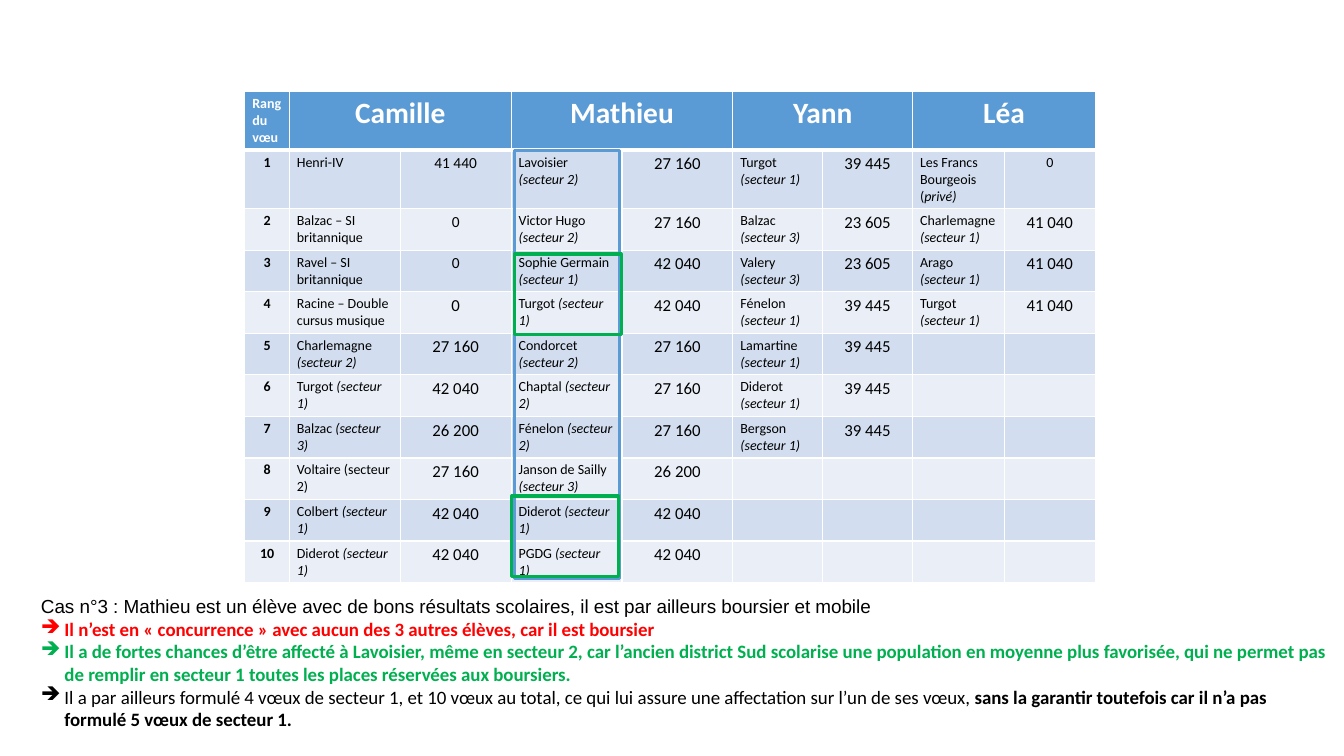
"""Builds the slide comparing the ranked school wishes of four pupils."""
import dataclasses

import lxml.etree
import pptx
import pptx.dml.color
import pptx.enum.shapes
import pptx.enum.text
import pptx.oxml.ns
import pptx.util

EMU_PER_PX = 3810
ALIGN = pptx.enum.text.PP_ALIGN


@dataclasses.dataclass(frozen=True)
class Theme:
    blue: str = "5B9BD5"
    green: str = "00B050"
    red: str = "FF0000"
    black: str = "000000"
    white: str = "FFFFFF"
    bands: tuple = ("D2DEEF", "EAEFF7")
    table_font: str = "Calibri"
    intro_font: str = "Arial"
    small: float = 10
    medium: float = 11
    value: float = 12
    comment: float = 13.5
    pupil: float = 21
    border: float = 1
    header_border: float = 3
    frame: float = 2.25


THEME = Theme()

COLUMN_WIDTHS = (106, 264, 264, 264, 264, 214, 214, 218, 218)
ROW_HEIGHTS = (136, 138) + (98,) * 9

WISHES = {
    "Camille": (
        ("Henri-IV", "41 440", THEME.medium),
        ("Balzac – SI britannique", "0", THEME.medium),
        ("Ravel – SI britannique", "0", THEME.medium),
        ("Racine – Double cursus musique", "0"),
        ("Charlemagne |(secteur 2)", "27 160"),
        ("Turgot |(secteur 1)", "42 040"),
        ("Balzac| (secteur 3)", "26 200"),
        ("Voltaire (secteur 2)", "27 160"),
        ("Colbert |(secteur 1)", "42 040"),
        ("Diderot |(secteur 1)", "42 040"),
    ),
    "Mathieu": (
        ("Lavoisier |(secteur 2)", "27 160"),
        ("Victor Hugo| (secteur 2)", "27 160"),
        ("Sophie Germain |(secteur 1)", "42 040"),
        ("Turgot |(secteur 1)", "42 040"),
        ("Condorcet |(secteur 2)", "27 160"),
        ("Chaptal |(secteur 2)", "27 160"),
        ("Fénelon |(secteur 2)", "27 160"),
        ("Janson de Sailly |(secteur 3)", "26 200"),
        ("Diderot |(secteur 1)", "42 040"),
        ("PGDG |(secteur 1)", "42 040"),
    ),
    "Yann": (
        ("Turgot |(secteur 1)", "39 445"),
        ("Balzac |(secteur 3)", "23 605"),
        ("Valery |(secteur 3)", "23 605"),
        ("Fénelon |(secteur 1)", "39 445"),
        ("Lamartine |(secteur 1)", "39 445"),
        ("Diderot |(secteur 1)", "39 445"),
        ("Bergson |(secteur 1)", "39 445"),
    ),
    "Léa": (
        ("Les Francs Bourgeois (|privé)", "0", THEME.small),
        ("Charlemagne |(secteur 1)", "41 040"),
        ("Arago |(secteur 1)", "41 040"),
        ("Turgot |(secteur 1)", "41 040"),
    ),
}

INTRO = ("Cas n°3 : Mathieu est un élève avec de bons résultats scolaires, "
         "il est par ailleurs boursier et mobile")
FINDINGS = (
    (THEME.red, (("Il n’est en « concurrence » avec aucun des 3 autres élèves, "
                  "car il est boursier", True),)),
    (THEME.green, (("Il a de fortes chances d’être affecté à Lavoisier, même en secteur 2, "
                    "car l’ancien district Sud scolarise une population en moyenne plus "
                    "favorisée, qui ne permet pas de remplir en secteur 1 toutes les places "
                    "réservées aux boursiers.", True),)),
    (THEME.black, (("Il a par ailleurs formulé 4 vœux de secteur 1, et 10 vœux au total, "
                    "ce qui lui assure une affectation sur l’un de ses vœux, ", False),
                   ("sans la garantir toutefois car il n’a pas formulé 5 vœux de secteur 1.",
                    True))),
)


def px(length):
    return pptx.util.Emu(length * EMU_PER_PX)


def rgb(colour):
    return pptx.dml.color.RGBColor.from_string(colour)


def add_run(paragraph, text, size, colour=THEME.black, bold=False, italic=False,
            font=THEME.table_font):
    run = paragraph.add_run()
    run.text = text
    run.font.name = font
    run.font.size = pptx.util.Pt(size)
    run.font.bold = bold
    run.font.italic = italic
    run.font.color.rgb = rgb(colour)


def add_xml(parent, tag, **attributes):
    return lxml.etree.SubElement(parent, pptx.oxml.ns.qn(tag), attributes)


def style_cell(cell, fill, top, bottom):
    cell.margin_left = cell.margin_right = px(18)
    cell.margin_top = cell.margin_bottom = px(9)
    properties = cell._tc.get_or_add_tcPr()
    widths = {"a:lnL": THEME.border, "a:lnR": THEME.border, "a:lnT": top, "a:lnB": bottom}
    for side, width in widths.items():
        border = add_xml(properties, side, w=str(pptx.util.Pt(width)))
        add_xml(add_xml(border, "a:solidFill"), "a:srgbClr", val=THEME.white)
    cell.fill.solid()
    cell.fill.fore_color.rgb = rgb(fill)


def write_centred(cell, text, size, **style):
    paragraph = cell.text_frame.paragraphs[0]
    paragraph.alignment = ALIGN.CENTER
    add_run(paragraph, text, size, **style)


def write_school(cell, school):
    name, _, sector = school.partition("|")
    paragraph = cell.text_frame.paragraphs[0]
    add_run(paragraph, name, THEME.small)
    if sector:
        add_run(paragraph, sector, THEME.small, italic=True)


def style_grid(table):
    for column, width in zip(table.columns, COLUMN_WIDTHS):
        column.width = px(width)
    for index, (row, height) in enumerate(zip(table.rows, ROW_HEIGHTS)):
        row.height = px(height)
        fill = THEME.bands[(index - 1) % 2] if index else THEME.blue
        top = THEME.header_border if index == 1 else THEME.border
        bottom = THEME.border if index else THEME.header_border
        for cell in row.cells:
            style_cell(cell, fill, top, bottom)


def add_wish_table(slide):
    table = slide.shapes.add_table(
        len(ROW_HEIGHTS), len(COLUMN_WIDTHS), px(583), px(218),
        px(sum(COLUMN_WIDTHS)), px(sum(ROW_HEIGHTS))).table
    style_grid(table)
    rank_title = table.cell(0, 0).text_frame.paragraphs[0]
    add_run(rank_title, "Rang", THEME.small, THEME.white, bold=True)
    rank_title.add_line_break()
    add_run(rank_title, "du vœu", THEME.small, THEME.white, bold=True)
    for rank in range(1, len(ROW_HEIGHTS)):
        write_centred(table.cell(rank, 0), str(rank), THEME.small, bold=True)
    for index, (pupil, wishes) in enumerate(WISHES.items()):
        column = 1 + 2 * index
        heading = table.cell(0, column)
        heading.merge(table.cell(0, column + 1))
        write_centred(heading, pupil, THEME.pupil, colour=THEME.white, bold=True)
        for rank, (school, points, *size) in enumerate(wishes, 1):
            write_school(table.cell(rank, column), school)
            write_centred(table.cell(rank, column + 1), points, *(size or [THEME.value]))


def add_frame(slide, left, top, width, height, colour):
    frame = slide.shapes.add_shape(pptx.enum.shapes.MSO_SHAPE.RECTANGLE,
                                   px(left), px(top), px(width), px(height))
    frame.shadow.inherit = False
    frame.fill.background()
    frame.line.color.rgb = rgb(colour)
    frame.line.width = pptx.util.Pt(THEME.frame)


def add_finding(text_frame, colour, parts):
    paragraph = text_frame.add_paragraph()
    properties = paragraph._p.get_or_add_pPr()
    properties.set("marL", str(px(56)))
    properties.set("indent", str(px(-56)))
    add_xml(properties, "a:buChar", char="➔")
    for text, bold in parts:
        add_run(paragraph, text, THEME.comment, colour, bold)


def add_commentary(slide):
    commentary = slide.shapes.add_textbox(px(74), px(1404), px(3110), px(350)).text_frame
    commentary.word_wrap = True
    intro = commentary.paragraphs[0]
    intro.alignment = ALIGN.JUSTIFY
    add_run(intro, INTRO, THEME.comment, font=THEME.intro_font)
    for colour, parts in FINDINGS:
        add_finding(commentary, colour, parts)


def main():
    presentation = pptx.Presentation()
    presentation.slide_width = px(3200)
    presentation.slide_height = px(1800)
    slide = presentation.slides.add_slide(presentation.slide_layouts[6])
    add_wish_table(slide)
    add_frame(slide, 1224, 358, 252, 1020, THEME.blue)
    add_frame(slide, 1226, 605, 254, 192, THEME.green)
    add_commentary(slide)
    add_frame(slide, 1219, 1181, 254, 192, THEME.green)
    presentation.save("out.pptx")


if __name__ == "__main__":
    main()
